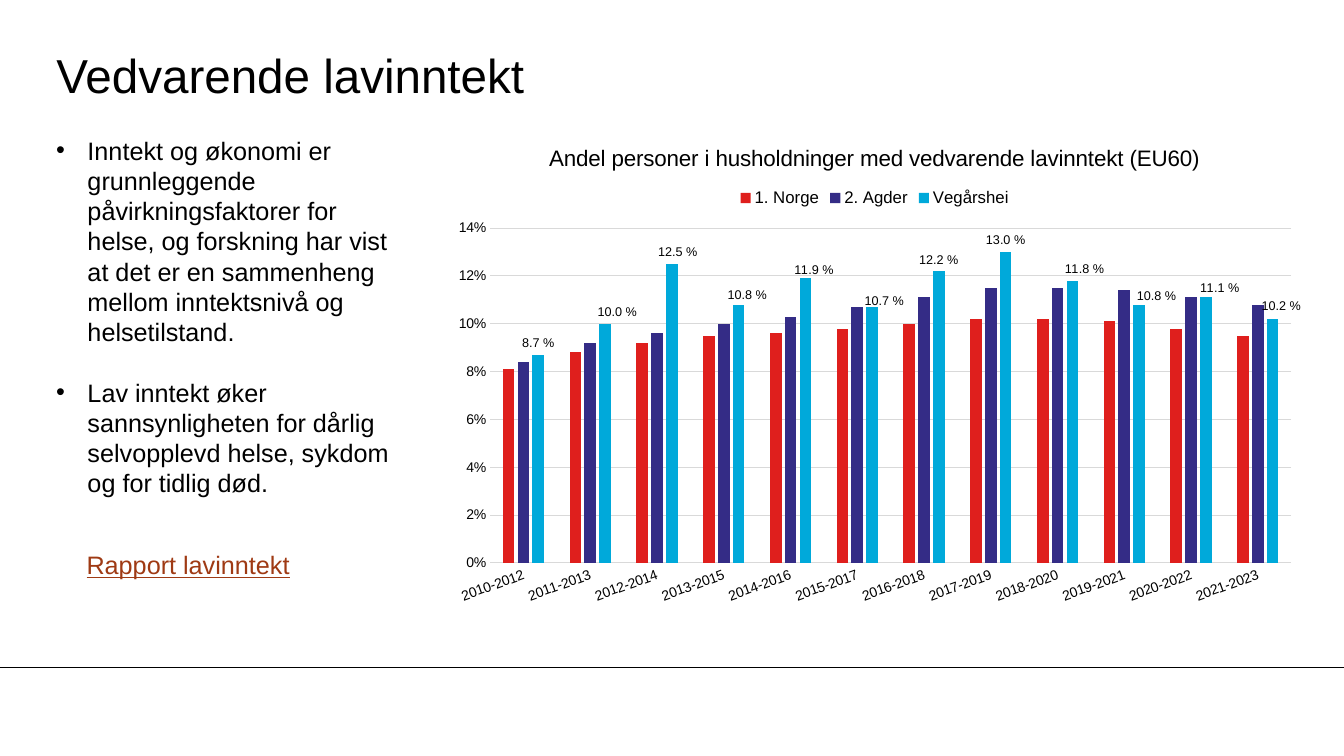
from dataclasses import dataclass

from lxml import etree
from pptx import Presentation
from pptx import util as u
from pptx.chart.data import CategoryChartData
from pptx.dml.color import RGBColor
from pptx.enum import chart as ch, shapes, text
from pptx.oxml import parse_xml
from pptx.oxml.ns import nsdecls, qn


@dataclass(frozen=True)
class Theme:
    font: str = "Arial"
    ink: str = "000000"
    link: str = "9F3A14"
    grid: str = "D9D9D9"
    series: tuple = ("DF1F1D", "342C86", "00A9DA")
    title: int = 34
    body: int = 18
    chart_title: int = 16
    legend: int = 12
    axis: int = 10
    label: int = 9


THEME = Theme()
LABEL_FORMAT = "0.0\\ %"
FACTORS = [
    "Inntekt og økonomi er grunnleggende påvirkningsfaktorer for helse, og forskning "
    "har vist at det er en sammenheng mellom inntektsnivå og helsetilstand.",
    "Lav inntekt øker sannsynligheten for dårlig selvopplevd helse, sykdom og for tidlig død.",
]
PERIODS = [f"{year}-{year + 2}" for year in range(2010, 2022)]
SHARES = {
    "1. Norge": [8.1, 8.8, 9.2, 9.5, 9.6, 9.8, 10.0, 10.2, 10.2, 10.1, 9.8, 9.5],
    "2. Agder": [8.4, 9.2, 9.6, 10.0, 10.3, 10.7, 11.1, 11.5, 11.5, 11.4, 11.1, 10.8],
    "Vegårshei": [8.7, 10.0, 12.5, 10.8, 11.9, 10.7, 12.2, 13.0, 11.8, 10.8, 11.1, 10.2],
}
LABEL_SHIFTS = {
    1: (0.014, 0), 2: (0.007, 0), 3: (0.01, 0.005), 4: (0.01, 0.007),
    5: (0.014, 0.012), 8: (0.014, 0), 9: (0.02, 0.007), 10: (0.016, 0.005),
    11: (0.01, -0.003),
}


def style(font, size, color=THEME.ink):
    font.name = THEME.font
    font.size = u.Pt(size)
    font.bold = False
    font.color.rgb = RGBColor.from_string(color)


def style_line(line, color):
    line.color.rgb = RGBColor.from_string(color)
    line.width = u.Pt(0.75)


def add_run(p, words, size, color=THEME.ink):
    r = p.add_run()
    r.text = words
    style(r.font, size, color)
    return r


def manual_layout(x, y, extra=""):
    return parse_xml(
        f'<c:layout {nsdecls("c")}><c:manualLayout>{extra}'
        f'<c:x val="{x}"/><c:y val="{y}"/></c:manualLayout></c:layout>'
    )


def add_title(s, box, words):
    sp = s.shapes.title
    sp.left, sp.top, sp.width, sp.height = map(u.Inches, box)
    tf = sp.text_frame
    tf.margin_left = tf.margin_right = tf.margin_top = tf.margin_bottom = 0
    tf.vertical_anchor = text.MSO_ANCHOR.MIDDLE
    p = tf.paragraphs[0]
    p.alignment = text.PP_ALIGN.LEFT
    add_run(p, words, THEME.title)


def add_text_box(s, box):
    tf = s.shapes.add_textbox(*map(u.Inches, box)).text_frame
    tf.word_wrap = True
    return tf


def add_factors(s, box):
    tf = add_text_box(s, box)
    for i, words in enumerate(FACTORS):
        p = tf.paragraphs[0] if i == 0 else tf.add_paragraph()
        pPr = p._p.get_or_add_pPr()
        pPr.set("marL", str(u.Inches(0.31)))
        pPr.set("indent", str(-u.Inches(0.31)))
        etree.SubElement(pPr, qn("a:buFont")).set("typeface", THEME.font)
        etree.SubElement(pPr, qn("a:buChar")).set("char", "•")
        if i:
            p.space_before = u.Pt(21.6)
        add_run(p, words, THEME.body)


def add_report(s, box):
    p = add_text_box(s, box).paragraphs[0]
    add_run(p, "Rapport lavinntekt", THEME.body, THEME.link).font.underline = True


def format_axes(chart):
    periods, shares = chart.category_axis, chart.value_axis
    for axis in (periods, shares):
        axis.major_tick_mark = axis.minor_tick_mark = ch.XL_TICK_MARK.NONE
        style(axis.tick_labels.font, THEME.axis)
    style_line(periods.format.line, THEME.grid)
    periods._element.find(qn("c:txPr")).find(qn("a:bodyPr")).set("rot", "-1200000")
    shares.minimum_scale, shares.maximum_scale, shares.major_unit = 0, 0.14, 0.02
    shares.tick_labels.number_format = "0%"
    shares.tick_labels.number_format_is_linked = False
    shares.format.line.fill.background()
    style_line(shares.major_gridlines.format.line, THEME.grid)


def label_series(series):
    labels = series.data_labels
    labels.show_value = True
    labels.number_format = LABEL_FORMAT
    labels.number_format_is_linked = False
    labels.position = ch.XL_LABEL_POSITION.OUTSIDE_END
    style(labels.font, THEME.label)
    for i, shift in LABEL_SHIFTS.items():
        label = series.points[i].data_label
        style(label.font, THEME.label)
        label.position = ch.XL_LABEL_POSITION.OUTSIDE_END
        idx = labels._element.xpath(f'c:dLbl/c:idx[@val="{i}"]')[0]
        layout = manual_layout(*shift)
        idx.addnext(layout)
        number_format = etree.Element(qn("c:numFmt"), formatCode=LABEL_FORMAT, sourceLinked="0")
        layout.addnext(number_format)


def add_share_chart(s, box):
    data = CategoryChartData(number_format="0.0%")
    data.categories = PERIODS
    for name, shares in SHARES.items():
        data.add_series(name, [round(share / 100, 3) for share in shares])
    kind = ch.XL_CHART_TYPE.COLUMN_CLUSTERED
    chart = s.shapes.add_chart(kind, *map(u.Inches, box), data).chart
    style(chart.font, THEME.axis)
    chart.has_title = True
    p = chart.chart_title.text_frame.paragraphs[0]
    add_run(p, "Andel personer i husholdninger med vedvarende lavinntekt (EU60)", THEME.chart_title)
    chart.has_legend = True
    chart.legend.position = ch.XL_LEGEND_POSITION.TOP
    chart.legend.include_in_layout = False
    style(chart.legend.font, THEME.legend)
    format_axes(chart)
    plot = chart.plots[0]
    plot.gap_width, plot.overlap, plot.vary_by_categories = 219, -27, False
    for series, color in zip(plot.series, THEME.series):
        series.format.fill.solid()
        series.format.fill.fore_color.rgb = RGBColor.from_string(color)
    label_series(plot.series[2])
    area = chart._chartSpace.chart.plotArea
    for layout in area.findall(qn("c:layout")):
        area.remove(layout)
    layout = manual_layout(
        0.057, 0.211,
        '<c:layoutTarget val="inner"/><c:xMode val="edge"/><c:yMode val="edge"/>',
    )
    for side, share in (("w", 0.923), ("h", 0.685)):
        etree.SubElement(layout[0], qn(f"c:{side}")).set("val", str(share))
    area.insert(0, layout)


def add_footer_rule(s, left, top, width):
    ends = map(u.Inches, (left, top, left + width, top))
    rule = s.shapes.add_connector(shapes.MSO_CONNECTOR.STRAIGHT, *ends)
    style_line(rule.line, THEME.ink)
    etree.SubElement(rule._element.spPr, qn("a:effectLst"))


def main():
    prs = Presentation()
    prs.slide_width, prs.slide_height = u.Inches(13.33), u.Inches(7.5)
    s = prs.slides.add_slide(prs.slide_layouts[5])
    add_footer_rule(s, 0, 6.62, 13.33)
    add_title(s, (0.56, 0.36, 11.1, 0.75), "Vedvarende lavinntekt")
    add_factors(s, (0.46, 1.29, 3.5, 3.74))
    add_report(s, (0.76, 5.4, 2.65, 0.4))
    add_share_chart(s, (4.37, 1.24, 8.61, 4.85))
    prs.save("out.pptx")


if __name__ == "__main__":
    main()
